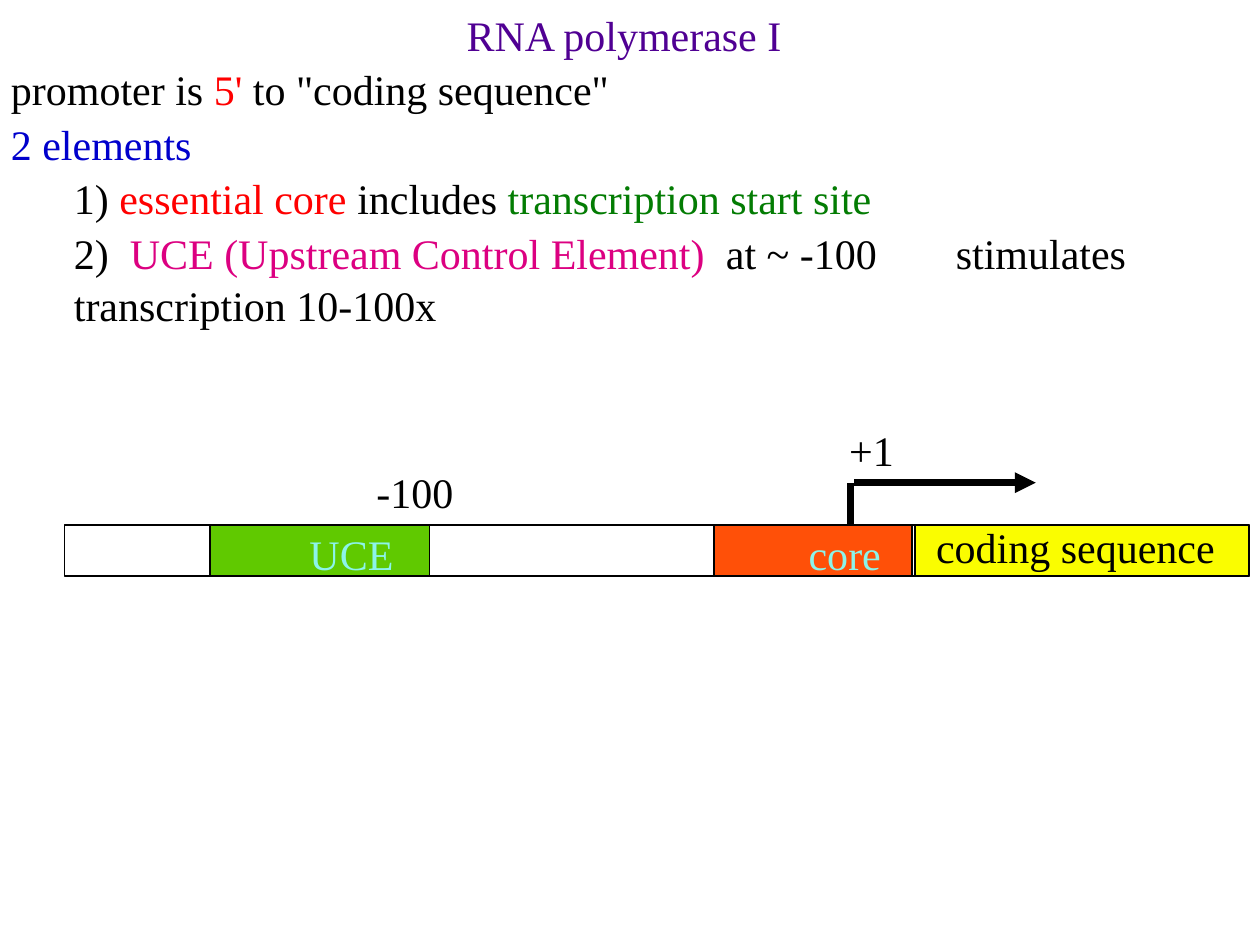
from pptx import Presentation
from pptx import util as u
from pptx.dml.color import RGBColor
from pptx.enum import shapes, text
from pptx.oxml.ns import qn
from lxml import etree

FONT = "Times New Roman"
SIZE = u.Pt(24)
LINE_PITCH = u.Pt(29.7)
BLACK, RED = "000000", "FF0000"
LABEL = "8CF4EA"
LEFT, CENTER = text.PP_ALIGN.LEFT, text.PP_ALIGN.CENTER


def rgb(value):
    return RGBColor.from_string(value)


def format_paragraph(paragraph, color, align=LEFT):
    paragraph.alignment = align
    paragraph.line_spacing = LINE_PITCH
    paragraph.font.name = FONT
    paragraph.font.size = SIZE
    paragraph.font.color.rgb = rgb(color)


def add_title(slide, left, top, width, height):
    title = slide.shapes.title
    title.left, title.top = u.Cm(left), u.Cm(top)
    title.width, title.height = u.Cm(width), u.Cm(height)
    frame = title.text_frame
    frame.text = "RNA polymerase I"
    frame.vertical_anchor = text.MSO_ANCHOR.TOP
    frame.auto_size = text.MSO_AUTO_SIZE.NONE
    format_paragraph(frame.paragraphs[0], "500093", CENTER)


def add_notes_list(slide, left, top, width, height):
    """Add the promoter facts; each line is (indented, [(wording, colour)])."""
    lines = [
        (False, [("promoter is", BLACK), (" 5' ", RED),
                 ('to "coding sequence"', BLACK)]),
        (False, [("2 elements", "0000CC")]),
        (True, [("1) ", BLACK), ("essential core ", RED),
                ("includes ", BLACK),
                ("transcription start site", "037C03")]),
        (True, [("2)", BLACK),
                ("  UCE (Upstream Control Element)  ", "DC0081"),
                ("at ~ -100\tstimulates transcription 10-100x", BLACK)]),
    ]
    box = slide.shapes.add_textbox(
        u.Cm(left), u.Cm(top), u.Cm(width), u.Cm(height))
    frame = box.text_frame
    frame.word_wrap = True
    for index, (indented, parts) in enumerate(lines):
        paragraph = frame.add_paragraph() if index else frame.paragraphs[0]
        format_paragraph(paragraph, BLACK)
        if index:
            paragraph.space_before = u.Pt(1.4)
        if indented:
            paragraph.level = 1
            properties = paragraph._p.get_or_add_pPr()
            properties.set("marL", str(u.Cm(1.27)))
            properties.set("indent", "0")
            properties.set("defTabSz", str(u.Cm(2.54)))
        for wording, color in parts:
            run = paragraph.add_run()
            run.text = wording
            run.font.color.rgb = rgb(color)


def add_segment(slide, left, top, width, height, fill, label=None):
    segment = slide.shapes.add_shape(
        shapes.MSO_SHAPE.RECTANGLE,
        u.Cm(left), u.Cm(top), u.Cm(width), u.Cm(height))
    segment.shadow.inherit = False
    segment.fill.solid()
    segment.fill.fore_color.rgb = rgb(fill)
    segment.line.color.rgb = rgb(BLACK)
    segment.line.width = u.Pt(1)
    if label:
        frame = segment.text_frame
        frame.text = label
        frame.word_wrap = False
        frame.vertical_anchor = text.MSO_ANCHOR.MIDDLE
        frame.margin_left = u.Cm(1.52)
        frame.margin_top, frame.margin_bottom = u.Cm(0.1), 0
        format_paragraph(frame.paragraphs[0], LABEL, CENTER)


def add_caption(slide, left, top, width, wording):
    box = slide.shapes.add_textbox(
        u.Cm(left), u.Cm(top), u.Cm(width), u.Cm(1.27))
    box.text_frame.word_wrap = False
    box.text_frame.text = wording
    format_paragraph(box.text_frame.paragraphs[0], BLACK)


def add_line(slide, start, end, arrow=False):
    x1, y1, x2, y2 = (u.Cm(value) for value in (*start, *end))
    line = slide.shapes.add_connector(
        shapes.MSO_CONNECTOR.STRAIGHT, x1, y1, x2, y2)
    line.line.color.rgb = rgb(BLACK)
    line.line.width = u.Pt(4)
    if arrow:
        etree.SubElement(line.line._get_or_add_ln(), qn("a:tailEnd"),
                         type="triangle")
    etree.SubElement(line._element.spPr, qn("a:effectLst"))


def add_gene_map(slide, left, top, width, height):
    """Draw the promoter and gene as a bar filling the given box."""
    coding = 17.14
    add_segment(slide, left, top, width, height, "FFFFFF")
    add_segment(slide, left + 2.94, top, 4.42, height, "60C900", "UCE")
    add_caption(slide, left + 6.04, top - 1.34, 2.06, "-100")
    add_segment(slide, left + 13.1, top, 3.99, height, "FF5008", "core")

    start_x, arrow_y = left + 15.85, top - 0.86
    add_line(slide, (start_x, top), (start_x, arrow_y))
    add_line(slide, (start_x + 0.07, arrow_y), (start_x + 3.73, arrow_y),
             arrow=True)
    add_caption(slide, start_x - 0.28, top - 2.18, 1.4, "+1")

    add_segment(slide, left + coding, top, width - coding, height, "FAFD00")
    add_caption(slide, left + coding + 0.18, top - 0.23, 6.58,
                "coding sequence")


def main():
    presentation = Presentation()
    presentation.slide_width = u.Cm(25.4)
    presentation.slide_height = u.Cm(19.05)
    slide = presentation.slides.add_slide(presentation.slide_layouts[5])
    add_title(slide, -0.03, 0.03, 25.22, 1.27)
    add_notes_list(slide, -0.03, 1.13, 25.22, 6.7)
    add_gene_map(slide, 1.3, 10.59, 23.88, 1.02)
    presentation.save("out.pptx")


if __name__ == "__main__":
    main()
